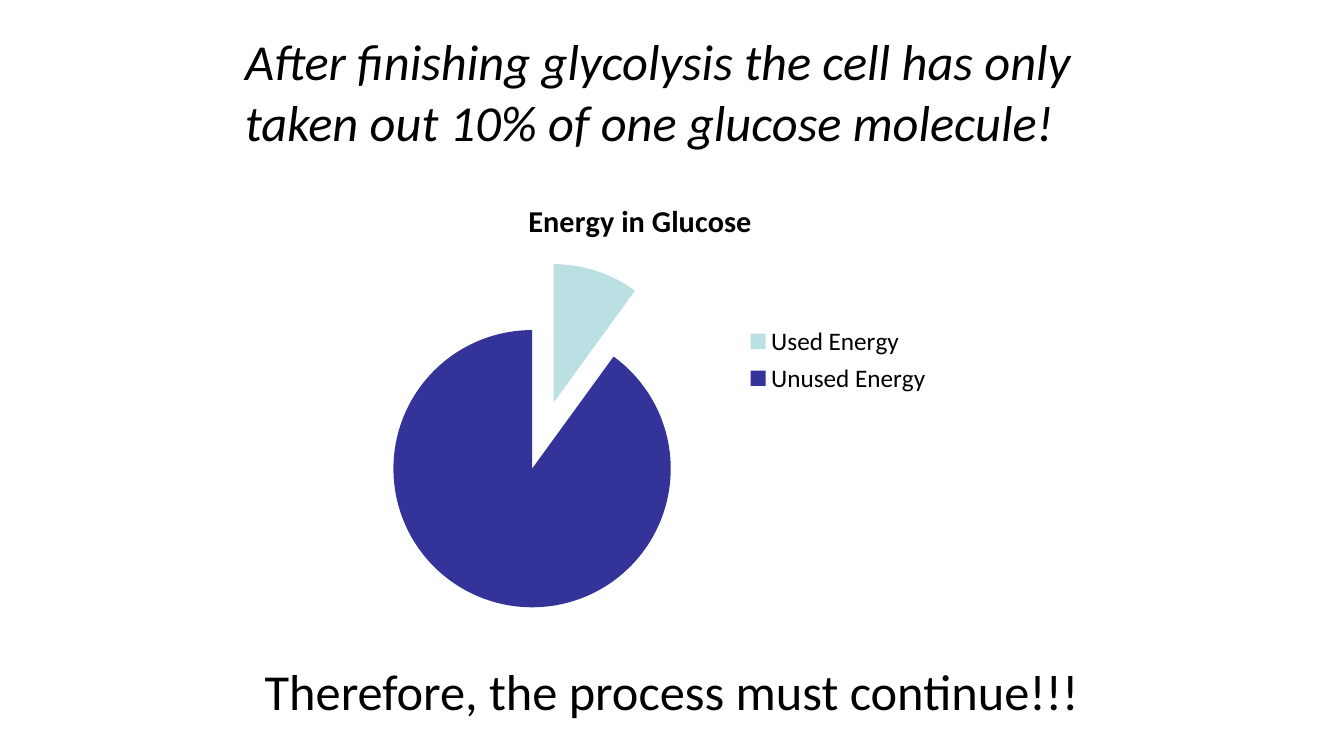
from dataclasses import dataclass

from lxml.etree import SubElement
from pptx import Presentation
from pptx.chart.data import CategoryChartData
from pptx.dml.color import RGBColor
from pptx.enum.chart import XL_CHART_TYPE as ChartType, XL_LEGEND_POSITION as LegendPosition
from pptx.enum.text import MSO_AUTO_SIZE as AutoSize, PP_ALIGN as Align
from pptx.oxml.ns import qn
from pptx.util import Inches, Pt


@dataclass(frozen=True)
class Theme:
    """Colours and type sizes of the slide."""
    font: str = "Calibri"
    ink: RGBColor = RGBColor(0x00, 0x00, 0x00)
    used: RGBColor = RGBColor(0xBB, 0xE0, 0xE3)
    unused: RGBColor = RGBColor(0x33, 0x33, 0x99)
    statement: float = 36
    chart_title: float = 21.6
    legend: float = 18


THEME = Theme()
WIDTH, HEIGHT = Inches(13.33), Inches(7.5)
COLUMN, ROW = WIDTH / 160, HEIGHT / 90


def grid_box(left, top, columns, rows):
    """Turn grid columns and rows into slide lengths."""
    return [round(length) for length in (left * COLUMN, top * ROW, columns * COLUMN, rows * ROW)]


def style_font(font, size, bold=False, italic=False):
    """Apply the theme's typeface and ink to a font."""
    font.name, font.size = THEME.font, Pt(size)
    font.bold, font.italic = bold, italic
    font.color.rgb = THEME.ink


def add_statement(slide, box, text, align=Align.LEFT, italic=False):
    """Add a large wrapped sentence."""
    text_frame = slide.shapes.add_textbox(*grid_box(*box)).text_frame
    text_frame.word_wrap = True
    text_frame.auto_size = AutoSize.SHAPE_TO_FIT_TEXT
    text_frame.text = text
    paragraph = text_frame.paragraphs[0]
    paragraph.alignment = align
    style_font(paragraph.runs[0].font, THEME.statement, italic=italic)


def place_part(part, after, **shares):
    """Place a chart part by shares of the chart's size."""
    for old_layout in part.findall(qn("c:layout")):
        part.remove(old_layout)
    layout = SubElement(part, qn("c:layout"))
    manual = SubElement(layout, qn("c:manualLayout"))
    if "w" in shares:
        SubElement(manual, qn("c:layoutTarget")).set("val", "inner")
    for axis in ("x", "y"):
        SubElement(manual, qn(f"c:{axis}Mode")).set("val", "edge")
    for name, share in shares.items():
        SubElement(manual, qn(f"c:{name}")).set("val", str(share))
    if after is None:
        part.insert(0, layout)
    else:
        part.find(qn(after)).addnext(layout)


def add_exploded_pie(slide, box, title, slices, explosion):
    """Add a pie with separated slices, a title and a legend."""
    data = CategoryChartData()
    data.categories = [name for name, _, _ in slices]
    data.add_series(title, [value for _, value, _ in slices])
    chart = slide.shapes.add_chart(ChartType.PIE, *grid_box(*box), data).chart
    style_font(chart.font, THEME.legend)
    chart.has_title = True
    chart.chart_title.text_frame.text = title
    title_run = chart.chart_title.text_frame.paragraphs[0].runs[0]
    style_font(title_run.font, THEME.chart_title, bold=True)
    chart.chart_title.include_in_layout = False
    chart.has_legend = True
    chart.legend.position = LegendPosition.RIGHT
    chart.legend.include_in_layout = False
    style_font(chart.legend.font, THEME.legend)

    plot = chart.plots[0]
    plot.vary_by_categories = True
    series = plot.series[0]
    for index, (_, _, colour) in enumerate(slices):
        point_format = series.points[index].format
        point_format.fill.solid()
        point_format.fill.fore_color.rgb = colour
        point_format.line.fill.background()
    for point in series._element.findall(qn("c:dPt")):
        burst = SubElement(point, qn("c:explosion"))
        burst.set("val", str(explosion))
        point.find(qn("c:spPr")).addprevious(burst)

    chart_element = chart._chartSpace.find(qn("c:chart"))
    place_part(chart_element.find(qn("c:title")), "c:tx", x=0.35, y=0.04)
    place_part(chart_element.find(qn("c:plotArea")), None, x=0.2, y=0.27, w=0.35, h=0.62)
    place_part(chart_element.find(qn("c:legend")), "c:legendPos", x=0.62, y=0.32, w=0.25, h=0.18)


def main():
    """Build and save the slide."""
    presentation = Presentation()
    presentation.slide_width, presentation.slide_height = WIDTH, HEIGHT
    slide = presentation.slides.add_slide(presentation.slide_layouts[6])
    add_statement(
        slide, (28, 3, 109, 15.75),
        "After finishing glycolysis the cell has only taken out 10% of one glucose molecule!",
        italic=True)
    add_statement(
        slide, (20, 78, 120, 8.5), "Therefore, the process must continue!!!", Align.CENTER)
    slices = [("Used Energy", 10, THEME.used), ("Unused Energy", 90, THEME.unused)]
    add_exploded_pie(slide, (29, 21, 95, 53.25), "Energy in Glucose", slices, explosion=25)
    presentation.save("out.pptx")


if __name__ == "__main__":
    main()
